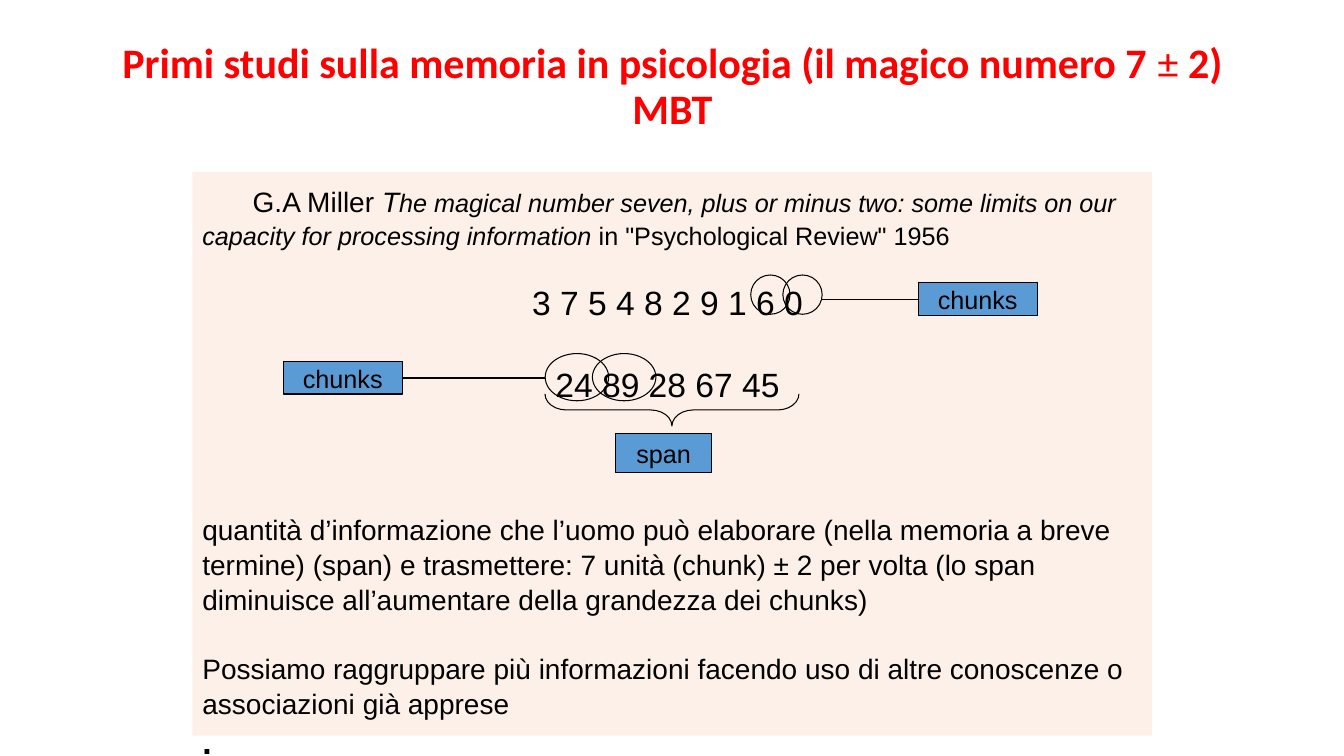
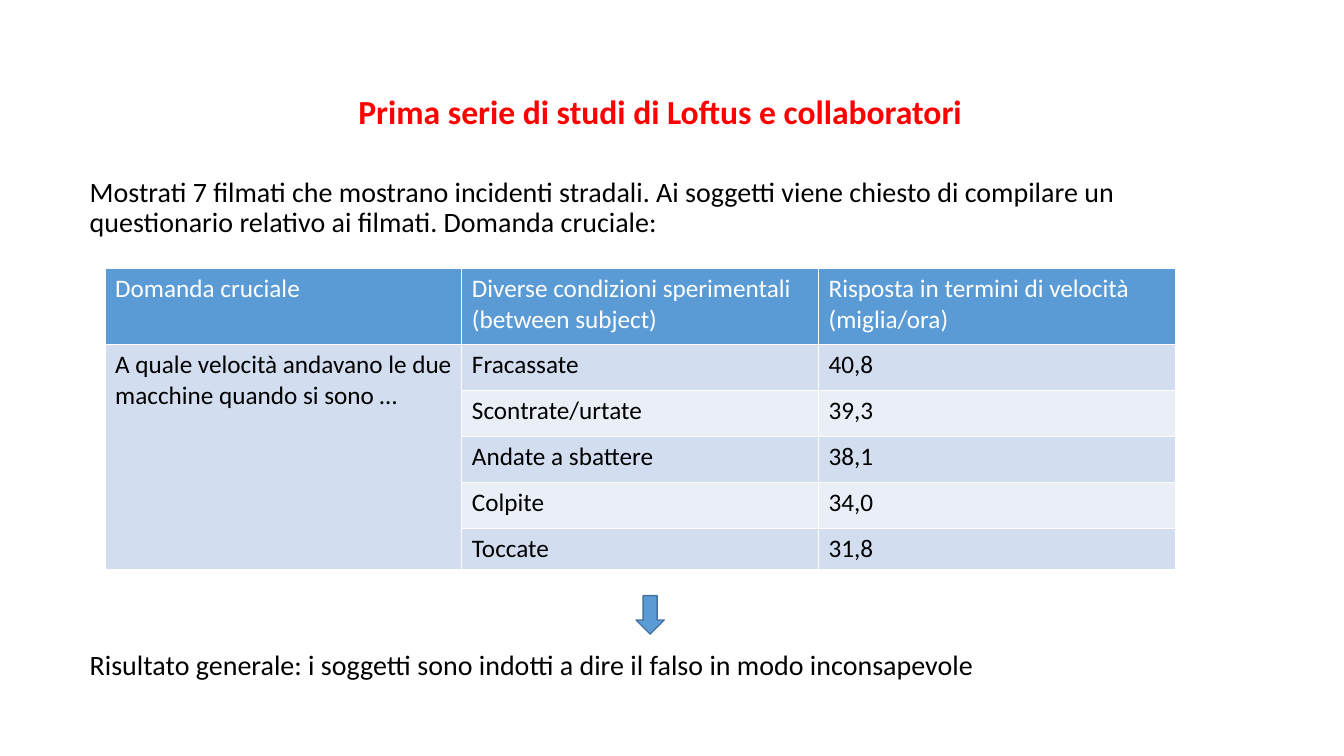
from dataclasses import dataclass

from lxml import etree
from pptx import Presentation
from pptx.dml.color import RGBColor
from pptx.enum.shapes import MSO_CONNECTOR, MSO_SHAPE
from pptx.enum.text import MSO_ANCHOR, PP_ALIGN
from pptx.oxml.ns import qn
from pptx.util import Cm, Pt

RECTANGLE = MSO_SHAPE.RECTANGLE
OVAL = MSO_SHAPE.OVAL
LEFT_BRACE = MSO_SHAPE.LEFT_BRACE
DOWN_ARROW = MSO_SHAPE.DOWN_ARROW
STRAIGHT = MSO_CONNECTOR.STRAIGHT
TOP, MIDDLE, BOTTOM = MSO_ANCHOR.TOP, MSO_ANCHOR.MIDDLE, MSO_ANCHOR.BOTTOM
LEFT, CENTER = PP_ALIGN.LEFT, PP_ALIGN.CENTER
LEFT_SIDE, RIGHT_SIDE = 1, 3


@dataclass(frozen=True)
class Theme:
    title: str = "FF0000"
    text: str = "000000"
    white: str = "FFFFFF"
    accent: str = "5B9BD5"
    accent_line: str = "43739E"
    panel: str = "F8CBAD"
    panel_opacity: int = 28
    band_dark: str = "D2DEEF"
    band_light: str = "EAEFF7"
    title_font: str = "Calibri"
    panel_font: str = "Arial"
    large_title: int = 30
    digits: int = 24
    body: int = 20
    small: int = 18
    thin: float = 0.75
    title_spacing: float = 0.9
    panel_spacing: float = 1.04


@dataclass(frozen=True)
class Box:
    left: float
    top: float
    width: float
    height: float

    def inside(self, left, top, width, height):
        return Box(self.left + left, self.top + top, width, height)

    def lengths(self):
        return Cm(self.left), Cm(self.top), Cm(self.width), Cm(self.height)


THEME = Theme()


def rgb(value):
    return RGBColor.from_string(value)


def format_font(font, name, size, color, bold=False, italic=False):
    font.name = name
    font.size = Pt(size)
    font.color.rgb = rgb(color)
    font.bold = bold
    font.italic = italic


def add_runs(paragraph, runs, name, color):
    for text, size, bold, italic in runs:
        run = paragraph.add_run()
        run.text = text
        format_font(run.font, name, size, color, bold, italic)


def add_outlined(slide, kind, box, fill=None, line=THEME.text, width=THEME.thin):
    shape = slide.shapes.add_shape(kind, *box.lengths())
    shape.shadow.inherit = False
    if fill:
        shape.fill.solid()
        shape.fill.fore_color.rgb = rgb(fill)
    else:
        shape.fill.background()
    if line:
        shape.line.color.rgb = rgb(line)
        shape.line.width = Pt(width)
    else:
        shape.line.fill.background()
    return shape


def add_text(slide, box, runs, color, alignment=LEFT, anchor=TOP):
    text_frame = slide.shapes.add_textbox(*box.lengths()).text_frame
    text_frame.word_wrap = True
    text_frame.vertical_anchor = anchor
    paragraph = text_frame.paragraphs[0]
    paragraph.alignment = alignment
    paragraph.line_spacing = THEME.title_spacing
    add_runs(paragraph, runs, THEME.title_font, color)


def add_title(slide, box, runs):
    add_text(slide, box, runs, THEME.title, CENTER, BOTTOM)


def add_label(slide, box, text):
    shape = add_outlined(slide, RECTANGLE, box, THEME.accent)
    text_frame = shape.text_frame
    text_frame.word_wrap = False
    text_frame.vertical_anchor = MIDDLE
    text_frame.text = text
    paragraph = text_frame.paragraphs[0]
    paragraph.alignment = CENTER
    format_font(paragraph.runs[0].font, THEME.panel_font, THEME.small, THEME.text)
    return shape


def add_oval_pair(slide, box, step):
    for index in range(2):
        add_outlined(slide, OVAL, box.inside(index * step, 0, box.width, box.height))


def join_label(slide, label, side, end_left):
    middle = label.top + label.height // 2
    connector = slide.shapes.add_connector(STRAIGHT, 0, 0, Cm(end_left), middle)
    connector.begin_connect(label, side)
    connector.line.color.rgb = rgb(THEME.text)
    connector.line.width = Pt(THEME.thin)
    etree.SubElement(connector._element.spPr, qn("a:effectLst"))


def add_memory_panel(slide, box):
    panel = add_outlined(slide, RECTANGLE, box, THEME.panel, None)
    color = panel._element.spPr.find(qn("a:solidFill")).find(qn("a:srgbClr"))
    etree.SubElement(color, qn("a:alpha"), val=str(THEME.panel_opacity * 1000))
    digits, body, small = THEME.digits, THEME.body, THEME.small
    paragraphs = [
        (0, LEFT, [
            ("\t", digits, True, False),
            ("G.A Miller ", body, False, False),
            ("T", body, False, True),
            ("he magical number seven, plus or minus two: some limits on our "
             "capacity for processing information", small, False, True),
            (' in "Psychological Review" 1956', small, False, False)]),
        (21.5, CENTER, [("3 7 5 4 8 2 9 1 6 0 ", digits, False, False)]),
        (28.7, CENTER, [("24 89 28 67 45 ", digits, False, False)]),
        (76.5, LEFT, [
            ("quantità d’informazione che l’uomo può elaborare (nella memoria a "
             "breve termine) (span) e trasmettere: 7 unità (chunk) ± 2 per volta "
             "(lo span diminuisce all’aumentare della grandezza dei chunks)",
             body, False, False)]),
        (23.9, LEFT, [
            ("Possiamo raggruppare più informazioni facendo uso di altre "
             "conoscenze o associazioni già apprese", body, False, False)]),
        (0, LEFT, [(".", digits, True, False)]),
    ]
    text_frame = panel.text_frame
    text_frame.word_wrap = True
    text_frame.vertical_anchor = TOP
    for index, (space, alignment, runs) in enumerate(paragraphs):
        paragraph = text_frame.add_paragraph() if index else text_frame.paragraphs[0]
        paragraph.alignment = alignment
        paragraph.line_spacing = THEME.panel_spacing
        paragraph.space_before = Pt(space)
        add_runs(paragraph, runs, THEME.panel_font, THEME.text)


def add_chunk_diagram(slide, box):
    brace = add_outlined(slide, LEFT_BRACE, box.inside(11.68, 2.79, 0.81, 6.4))
    brace.rotation = 270
    brace.adjustments[0] = 0.665
    add_label(slide, box.inside(10.67, 6.58, 2.41, 1), "span")

    single_digits = box.inside(14.07, 2.59, 0.99, 0.99)
    add_oval_pair(slide, single_digits, 0.81)
    label = add_label(slide, box.inside(18.29, 2.79, 3, 0.81), "chunks")
    join_label(slide, label, LEFT_SIDE, single_digits.left + 0.81 + single_digits.width)

    digit_pairs = box.inside(8.89, 4.57, 1.6, 1.19)
    add_oval_pair(slide, digit_pairs, 1.19)
    label = add_label(slide, box.inside(2.29, 4.78, 3, 0.81), "chunks")
    join_label(slide, label, RIGHT_SIDE, digit_pairs.left)


def format_cell(cell, fill, color):
    properties = cell._tc.get_or_add_tcPr()
    for side in ("lnL", "lnR", "lnT", "lnB"):
        line = etree.SubElement(properties, qn(f"a:{side}"), w=str(Pt(1)))
        solid = etree.SubElement(line, qn("a:solidFill"))
        etree.SubElement(solid, qn("a:srgbClr"), val=THEME.white)
    cell.fill.solid()
    cell.fill.fore_color.rgb = rgb(fill)
    for run in cell.text_frame.paragraphs[0].runs:
        format_font(run.font, THEME.title_font, THEME.small, color)


def add_speed_table(slide, box):
    rows = [
        ("Domanda cruciale", "Diverse condizioni sperimentali (between subject)",
         "Risposta in termini di velocità (miglia/ora)"),
        ("A quale velocità andavano le due macchine quando si sono …",
         "Fracassate", "40,8"),
        ("", "Scontrate/urtate", "39,3"),
        ("", "Andate a sbattere", "38,1"),
        ("", "Colpite", "34,0"),
        ("", "Toccate", "31,8"),
    ]
    heights = [1.92] + [1.16] * 4 + [1.03]
    table = slide.shapes.add_table(len(rows), len(rows[0]), *box.lengths()).table
    for column in table.columns:
        column.width = Cm(box.width / len(rows[0]))
    for row_index, (values, height) in enumerate(zip(rows, heights)):
        table.rows[row_index].height = Cm(height)
        band = THEME.band_dark if row_index % 2 else THEME.band_light
        for column_index, value in enumerate(values):
            cell = table.cell(row_index, column_index)
            if value:
                cell.text = value
            if row_index == 0:
                format_cell(cell, THEME.accent, THEME.white)
            else:
                format_cell(cell, band if column_index else THEME.band_dark, THEME.text)
    table.cell(1, 0).merge(table.cell(len(rows) - 1, 0))


def build_memory_slide(slide):
    panel = Box(4.85, 4.34, 24.18, 14.2)
    add_memory_panel(slide, panel)
    add_chunk_diagram(slide, panel)
    add_title(slide, Box(2.34, 0.8, 29.21, 2.68), [
        ("Primi studi sulla memoria in psicologia (il magico numero 7 ",
         THEME.large_title, True, False),
        ("± ", THEME.large_title, False, False),
        ("2) MBT", THEME.large_title, True, False)])


def build_loftus_slide(slide):
    add_title(slide, Box(3.94, 2.21, 25.4, 1.24), [
        ("Prima serie di studi di Loftus e collaboratori", THEME.digits, True, False)])
    body = Box(2.01, 4.37, 27.64, 14.2)
    statements = [
        (0, 1.8, "Mostrati 7 filmati che mostrano incidenti stradali. Ai soggetti viene "
                 "chiesto di compilare un questionario relativo ai filmati. "
                 "Domanda cruciale:"),
        (11.92, 1.1, "Risultato generale: i soggetti sono indotti a dire il falso in "
                     "modo inconsapevole"),
    ]
    for top, height, text in statements:
        add_text(slide, body.inside(0, top, body.width, height),
                 [(text, THEME.body, False, False)], THEME.text)
    add_speed_table(slide, body.inside(0.64, 2.39, 26.97, 7.59))
    add_outlined(slide, DOWN_ARROW, body.inside(14.02, 10.64, 0.71, 0.97),
                 THEME.accent, THEME.accent_line, 1)


def main():
    presentation = Presentation()
    presentation.slide_width = Cm(33.87)
    presentation.slide_height = Cm(19.05)
    blank = presentation.slide_layouts[6]
    for build_slide in (build_memory_slide, build_loftus_slide):
        build_slide(presentation.slides.add_slide(blank))
    presentation.save("out.pptx")


if __name__ == "__main__":
    main()
